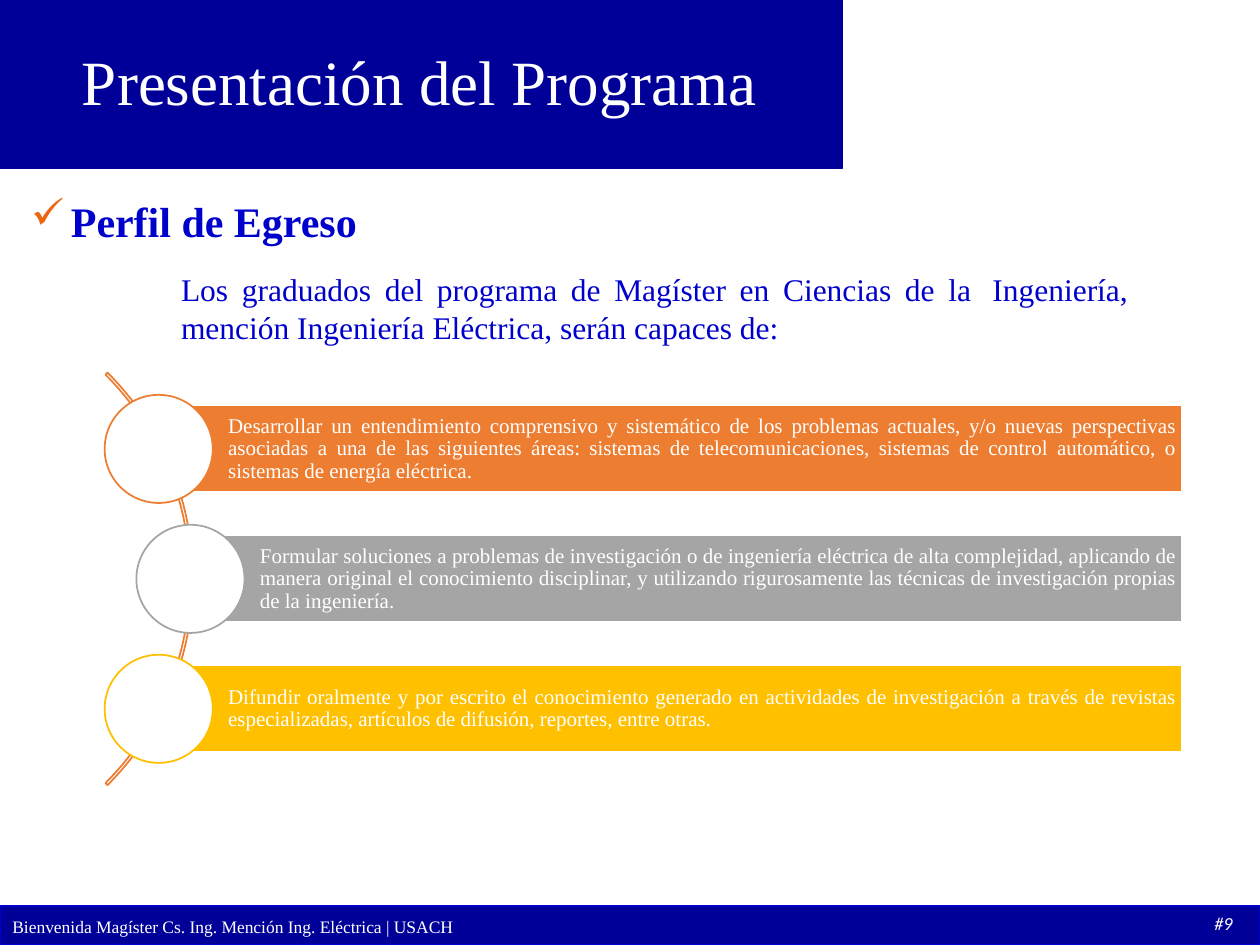
"""Build the graduate profile slide of the master's programme."""
from lxml.etree import SubElement
from pptx import Presentation
from pptx.dml.color import RGBColor
from pptx.enum.shapes import MSO_SHAPE
from pptx.enum.text import MSO_ANCHOR, PP_ALIGN
from pptx.oxml.ns import qn
from pptx.util import Cm, Pt

COLORS = {
    "navy": "000099", "blue": "0000CC", "white": "FFFFFF", "check": "EE6510",
    "orange": "ED7D31", "gray": "A5A5A5", "gold": "FFC000",
}


def write(shape, text, size=12, color="white", font="Times New Roman", bold=False,
          italic=False, align=PP_ALIGN.LEFT, anchor=MSO_ANCHOR.TOP, space=1.0,
          inset=(0.25, 0.13, 0.25, 0.13), bullet=None):
    frame = shape.text_frame
    frame.word_wrap = True
    frame.vertical_anchor = anchor
    (frame.margin_left, frame.margin_top,
     frame.margin_right, frame.margin_bottom) = map(Cm, inset)
    para = frame.paragraphs[0]
    para.alignment = align
    para.line_spacing = space
    if bullet:
        props = para._p.get_or_add_pPr()
        props.set("marL", str(Cm(0.8)))
        props.set("indent", str(Cm(-0.8)))
        tint = SubElement(props, qn("a:buClr"))
        SubElement(tint, qn("a:srgbClr"), val=COLORS["check"])
        SubElement(props, qn("a:buChar"), char=bullet)
    run = para.add_run()
    run.text = text
    run.font.name = font
    run.font.size = Pt(size)
    run.font.bold = bold
    run.font.italic = italic
    run.font.color.rgb = RGBColor.from_string(COLORS[color])


def draw(kind, place, fill, line):
    shape = slide.shapes.add_shape(kind, *map(Cm, place))
    shape.shadow.inherit = False
    if fill:
        shape.fill.solid()
        shape.fill.fore_color.rgb = RGBColor.from_string(COLORS[fill])
    else:
        shape.fill.background()
    shape.line.color.rgb = RGBColor.from_string(COLORS[line])
    shape.line.width = Pt(1)
    return shape


deck = Presentation()
deck.slide_width, deck.slide_height = Cm(25.4), Cm(19.05)
slide = deck.slides.add_slide(deck.slide_layouts[5])

draw(MSO_SHAPE.RECTANGLE, (0, 0, 16.97, 3.4), "navy", "navy")
draw(MSO_SHAPE.RECTANGLE, (0, 18.26, 25.4, 0.79), "navy", "blue")

title = slide.shapes.title
title.element.getparent().append(title.element)
title.left, title.top, title.width, title.height = map(Cm, (0, 0, 16.92, 3.43))
write(title, "Presentación del Programa", size=36, align=PP_ALIGN.CENTER,
      anchor=MSO_ANCHOR.MIDDLE, space=0.9)

labels = [
    ((0, 18.34, 23.44, 0.69),
     "Bienvenida Magíster Cs. Ing. Mención Ing. Eléctrica | USACH", dict(size=10)),
    ((24.23, 18.26, 1.17, 0.71), "#9", dict(size=10.5, font="Calibri", italic=True)),
    ((0.38, 3.81, 24.18, 1.27), "Perfil de Egreso",
     dict(size=24, color="blue", bold=True, align=PP_ALIGN.JUSTIFY, bullet="✓")),
    ((3.4, 5.31, 19.61, 1.8),
     "Los graduados del programa de Magíster en Ciencias de la\u00a0 Ingeniería, "
     "mención Ingeniería Eléctrica, serán capaces de:",
     dict(size=18, color="blue", align=PP_ALIGN.JUSTIFY)),
]
for place, text, style in labels:
    write(slide.shapes.add_textbox(*map(Cm, place)), text, **style)

arc = draw(MSO_SHAPE.BLOCK_ARC, (-7.87, 5.79, 11.76, 11.76), None, "orange")
for index, value in enumerate((189, 27, 0.005)):
    arc.adjustments[index] = value

goals = [
    ("orange", 3.2,
     "Desarrollar un entendimiento comprensivo y sistemático de los problemas "
     "actuales, y/o nuevas perspectivas asociadas a una de las siguientes áreas: "
     "sistemas de telecomunicaciones, sistemas de control automático, o sistemas "
     "de energía eléctrica."),
    ("gray", 3.84,
     "Formular soluciones a problemas de investigación o de ingeniería eléctrica "
     "de alta complejidad, aplicando de manera original el conocimiento "
     "disciplinar, y utilizando rigurosamente las técnicas de investigación "
     "propias de la ingeniería."),
    ("gold", 3.2,
     "Difundir oralmente y por escrito el conocimiento generado en actividades de "
     "investigación a través de revistas especializadas, artículos de difusión, "
     "reportes, entre otras."),
]
right, high, disc = 23.82, 1.75, 2.18
for row, (color, left, text) in enumerate(goals):
    mid = 9.05 + 2.62 * row
    bar = draw(MSO_SHAPE.RECTANGLE, (left, mid - high / 2, right - left, high),
               color, "white")
    write(bar, text, align=PP_ALIGN.JUSTIFY, anchor=MSO_ANCHOR.MIDDLE, space=0.9,
          inset=(1.4, 0.08, 0.08, 0.08))
    draw(MSO_SHAPE.OVAL, (left - disc / 2, mid - disc / 2, disc, disc),
         "white", color)

deck.save("out.pptx")
